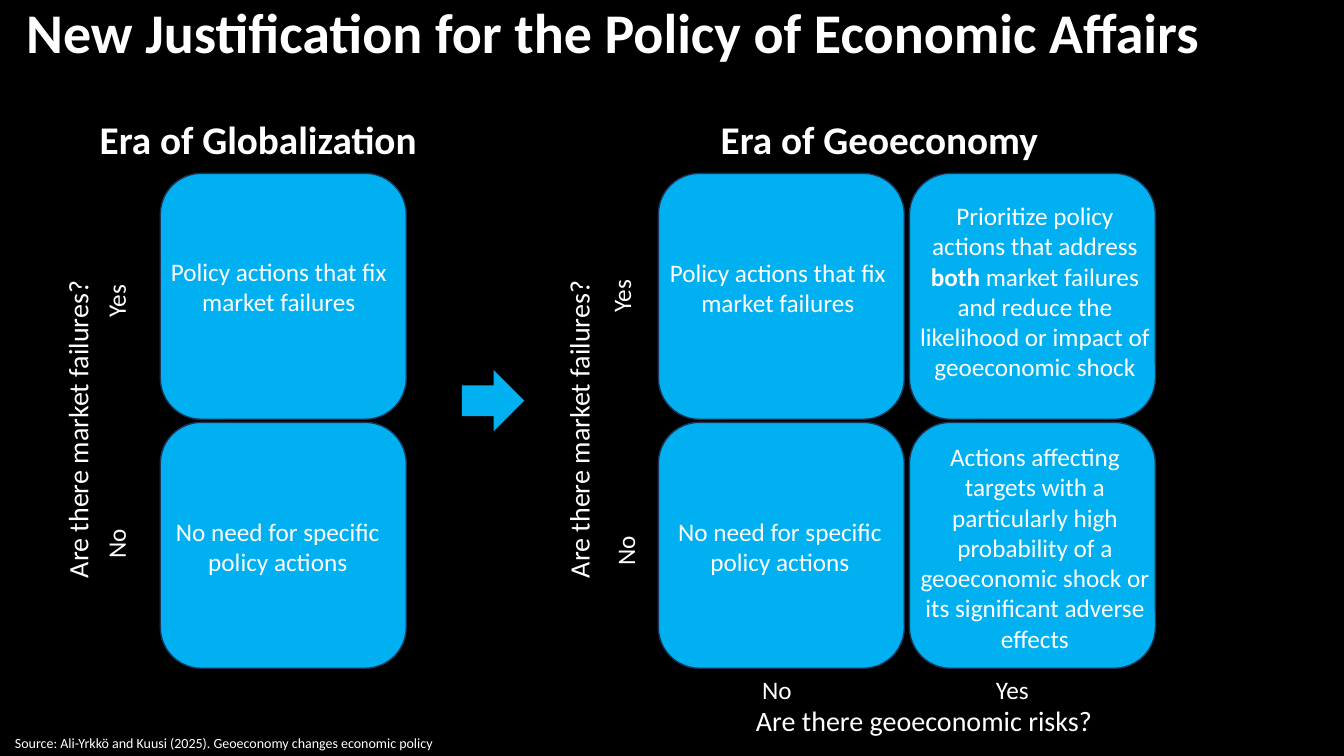
"""Build a slide comparing policy grids of the globalization and geoeconomy eras."""
from dataclasses import dataclass

from pptx import Presentation
from pptx.dml.color import RGBColor
from pptx.enum.shapes import MSO_SHAPE as Shape
from pptx.enum.text import MSO_ANCHOR as Anchor, MSO_AUTO_SIZE as AutoSize, PP_ALIGN as Align
from pptx.util import Inches, Pt


@dataclass(frozen=True)
class Theme:
    """Colours, font and type sizes of the slide."""
    background: RGBColor = RGBColor(0x00, 0x00, 0x00)
    text: RGBColor = RGBColor(0xFF, 0xFF, 0xFF)
    fill: RGBColor = RGBColor(0x00, 0xB0, 0xF0)
    outline: RGBColor = RGBColor(0x1E, 0x32, 0x56)
    font: str = "Calibri"
    title: int = 40
    heading: int = 28
    question: int = 20
    body: int = 18
    source: int = 10


THEME = Theme()
TILE = 2.44
COLUMNS = (1.59, 6.53, 9.02)
ROWS = (1.72, 4.19)
FIX = [("Policy actions that fix market failures", False)]
NO_NEED = [("No need for specific policy actions", False)]
PRIORITIZE = [
    ("Prioritize policy actions that address ", False),
    ("both", True),
    (" market failures and reduce the likelihood or impact of geoeconomic shock", False),
]
TARGETED = [("Actions affecting targets with a particularly high probability of a "
             "geoeconomic shock or its significant adverse effects", False)]
CELLS = (
    (0, 0, FIX, (1.5, 2.49, 2.53, 0.71)),
    (0, 1, NO_NEED, (1.49, 5.07, 2.53, 0.71)),
    (1, 0, FIX, (6.45, 2.5, 2.53, 0.71)),
    (1, 1, NO_NEED, (6.49, 5.07, 2.49, 0.71)),
    (2, 0, PRIORITIZE, (9, 1.94, 2.53, 1.92)),
    (2, 1, TARGETED, (9.01, 4.33, 2.51, 2.22)),
)


def write(box, runs, size, align=Align.LEFT, wrap=True):
    """Fill a text shape with runs given as (text, bold) pairs and return its paragraph."""
    frame = box.text_frame
    frame.word_wrap = wrap
    frame.auto_size = AutoSize.SHAPE_TO_FIT_TEXT
    frame.vertical_anchor = Anchor.TOP
    para = frame.paragraphs[0]
    para.alignment = align
    for text, bold in runs:
        span = para.add_run()
        span.text = text
        span.font.name = THEME.font
        span.font.size = Pt(size)
        span.font.bold = bold
        span.font.color.rgb = THEME.text
    return para


def add_title(page, text):
    """Place the slide title in the title placeholder."""
    title = page.shapes.title
    title.left, title.top = Inches(0.16), Inches(-0.07)
    title.width, title.height = Inches(13.17), Inches(0.77)
    write(title, [(text, True)], THEME.title)


def add_label(page, place, text, size, bold=False):
    """Add a one-line label and return its box and paragraph."""
    box = page.shapes.add_textbox(*map(Inches, place))
    return box, write(box, [(text, bold)], size, wrap=False)


def add_upright_label(page, place, text):
    """Add a short label that reads from bottom to top."""
    box, _ = add_label(page, place, text, THEME.body)
    box.text_frame._txBody.bodyPr.set("vert", "vert270")


def add_side_question(page, left):
    """Add the rotated question beside a grid."""
    box = page.shapes.add_textbox(*map(Inches, (left, 4.04, 5.58, 0.44)))
    box.rotation = 270
    write(box, [("Are there market failures?", False)], THEME.question, Align.CENTER)


def add_block(page, kind, place, outlined=False):
    """Add a flat filled shape, with a thin outline on request."""
    shape = page.shapes.add_shape(kind, *map(Inches, place))
    shape.shadow.inherit = False
    shape.fill.solid()
    shape.fill.fore_color.rgb = THEME.fill
    if outlined:
        shape.line.color.rgb = THEME.outline
        shape.line.width = Pt(1)
    else:
        shape.line.fill.background()


def add_cell(page, column, row, runs, place):
    """Add a rounded tile on the grid and the text over it."""
    add_block(page, Shape.ROUNDED_RECTANGLE, (COLUMNS[column], ROWS[row], TILE, TILE), True)
    box = page.shapes.add_textbox(*map(Inches, place))
    write(box, runs, THEME.body, Align.CENTER)


def main():
    """Assemble and save the deck."""
    deck = Presentation()
    deck.slide_width, deck.slide_height = Inches(13.33), Inches(7.5)
    page = deck.slides.add_slide(deck.slide_layouts[5])
    page.background.fill.solid()
    page.background.fill.fore_color.rgb = THEME.background

    add_title(page, "New Justification for the Policy of Economic Affairs")
    add_label(page, (0.89, 1.09, 3.38, 0.57), "Era of Globalization", THEME.heading, True)
    add_label(page, (7.05, 1.09, 3.48, 0.57), "Era of Geoeconomy", THEME.heading, True)
    for cell in CELLS:
        add_cell(page, *cell)
    add_block(page, Shape.RIGHT_ARROW, (4.58, 3.67, 0.62, 0.61))

    for left in (-2.02, 2.95):
        add_side_question(page, left)
    for left, top in ((0.95, 2.82), (5.96, 2.77)):
        add_upright_label(page, (left, top, 0.5, 0.43), "Yes")
    for left, top in ((0.95, 5.24), (6, 5.31)):
        add_upright_label(page, (left, top, 0.5, 0.4), "No")

    add_label(page, (7.46, 6.64, 0.5, 0.4), "No", THEME.body)
    add_label(page, (9.78, 6.64, 0.53, 0.4), "Yes", THEME.body)
    _, risks = add_label(page, (7.4, 7.12, 3.57, 0.28), "Are there geoeconomic risks?",
                         THEME.question)
    risks.line_spacing = Pt(10)
    add_label(page, (0.05, 7.24, 4.42, 0.27),
              "Source: Ali-Yrkkö and Kuusi (2025). Geoeconomy changes economic policy",
              THEME.source)
    deck.save("out.pptx")


if __name__ == "__main__":
    main()
